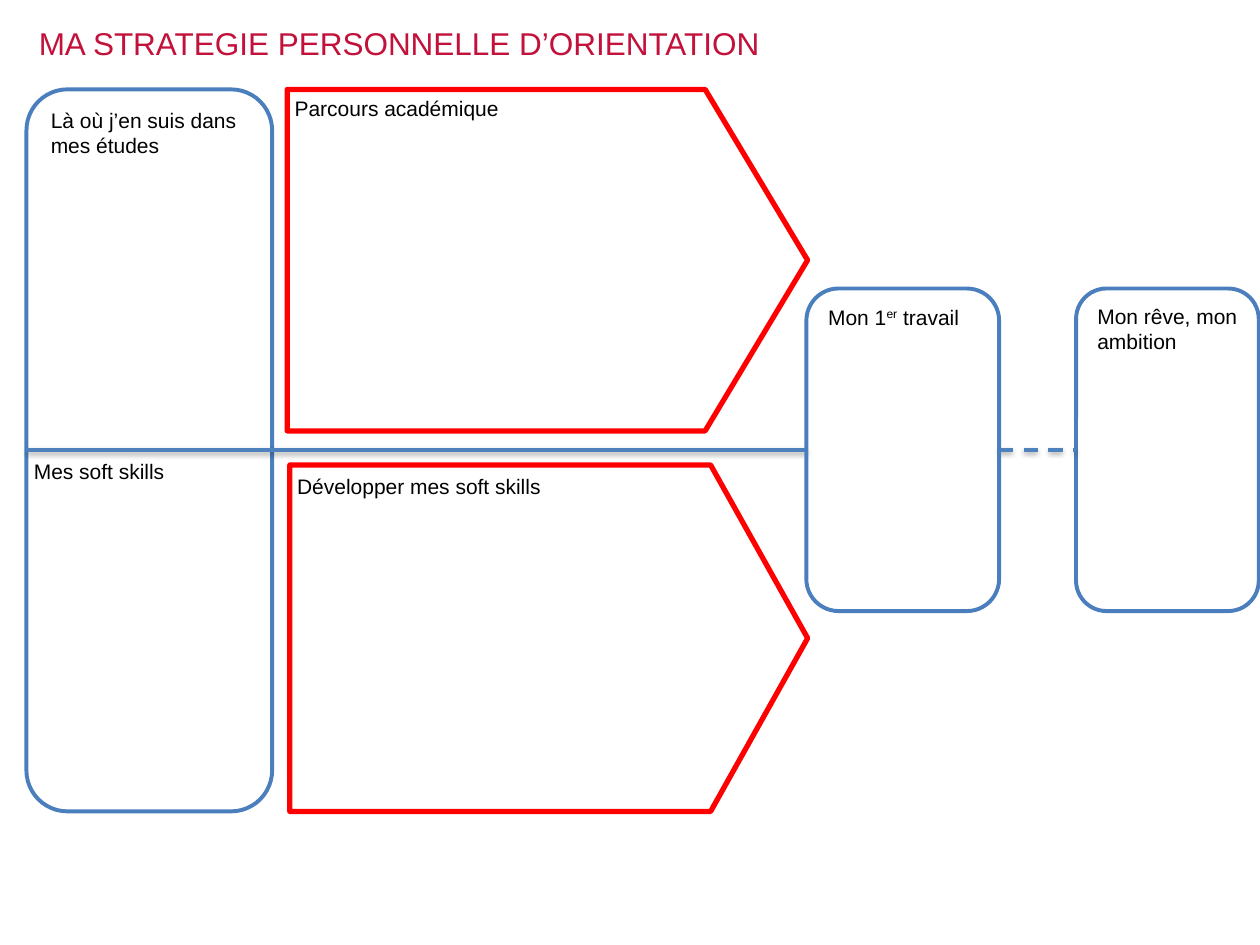
from lxml.etree import SubElement
from pptx import Presentation
from pptx.dml.color import RGBColor
from pptx.enum.dml import MSO_LINE
from pptx.enum.shapes import MSO_CONNECTOR, MSO_SHAPE
from pptx.enum.text import MSO_ANCHOR, MSO_AUTO_SIZE, PP_ALIGN
from pptx.oxml.ns import qn
from pptx.util import Inches, Pt

BLACK = RGBColor(0x00, 0x00, 0x00)
CRIMSON = RGBColor(0xC2, 0x11, 0x3A)
RED = RGBColor(0xFF, 0x00, 0x00)
STEEL = RGBColor(0x4B, 0x7E, 0xBC)
BLUE = RGBColor(0x4F, 0x81, 0xBD)

# The grid has square cells: 100 columns by 75 rows
COLUMNS, ROWS = 100, 75
CELL = Inches(0.1)


class StrategyMap:
    font = "Arial"
    text_size = 12
    title_size = 18

    def __init__(self, presentation):
        self.slide = presentation.slides.add_slide(presentation.slide_layouts[6])

    def grid(self, *cells):
        return [round(cell * CELL) for cell in cells]

    def fill_text(self, frame, parts, size=text_size, color=BLACK):
        """Add parts as runs; every second part is a superscript."""
        frame.vertical_anchor = MSO_ANCHOR.TOP
        paragraph = frame.paragraphs[0]
        paragraph.alignment = PP_ALIGN.LEFT
        for index, part in enumerate(parts):
            run = paragraph.add_run()
            run.text = part
            run.font.name = self.font
            run.font.size = Pt(size)
            run.font.color.rgb = color
            if index % 2:
                run._r.get_or_add_rPr().set("baseline", "30000")

    def outline(self, preset, area, color, width):
        shape = self.slide.shapes.add_shape(preset, *self.grid(*area))
        shape.shadow.inherit = False
        shape.fill.background()
        shape.line.color.rgb = color
        shape.line.width = Pt(width)
        return shape

    def stage(self, area, *parts):
        card = self.outline(MSO_SHAPE.ROUNDED_RECTANGLE, area, STEEL, 2.25)
        card.text_frame.word_wrap = True
        self.fill_text(card.text_frame, parts)

    def pathway(self, area, point):
        arrow = self.outline(MSO_SHAPE.PENTAGON, area, RED, 3)
        arrow.adjustments[0] = point

    def timeline(self, start, end, row, dash=None):
        ends = self.grid(start, row, end, row)
        line = self.slide.shapes.add_connector(MSO_CONNECTOR.STRAIGHT, *ends)
        line.line.color.rgb = BLUE
        line.line.width = Pt(2)
        if dash:
            line.line.dash_style = dash
        # Soft shadow straight below the line
        effects = SubElement(line._element.spPr, qn("a:effectLst"))
        shadow = SubElement(effects, qn("a:outerShdw"), blurRad="40000",
                            dist="20000", dir="5400000", rotWithShape="0")
        tint = SubElement(shadow, qn("a:srgbClr"), val=str(BLACK))
        SubElement(tint, qn("a:alpha"), val="38000")

    def label(self, area, text):
        frame = self.slide.shapes.add_textbox(*self.grid(*area)).text_frame
        frame.word_wrap = False
        frame.auto_size = MSO_AUTO_SIZE.SHAPE_TO_FIT_TEXT
        self.fill_text(frame, [text])

    def title(self, area, text):
        frame = self.slide.shapes.add_textbox(*self.grid(*area)).text_frame
        frame.word_wrap = True
        self.fill_text(frame, [text], self.title_size, CRIMSON)


def main():
    presentation = Presentation()
    presentation.slide_width = COLUMNS * CELL
    presentation.slide_height = ROWS * CELL
    strategy = StrategyMap(presentation)

    left, top, axis = 2.1, 7.1, 35.7
    job_left, job_width, dream_left = 64, 15.3, 85.4
    goal_top, goal_height = 22.9, 25.6

    # Starting point and final ambition
    strategy.stage((left, top, 19.5, 57.3), "Là où j’en suis dans mes études")
    strategy.stage((dream_left, goal_top, 14.5, goal_height),
                   "Mon rêve, mon ambition")

    # Timeline and the two pathways around it
    strategy.timeline(left, job_left, axis)
    strategy.pathway((22.8, top, 41.3, 27.1), 0.3)
    strategy.pathway((23, 36.9, 41.1, 27.5), 0.28)
    strategy.timeline(job_left + job_width, dream_left, axis, MSO_LINE.DASH)

    # Labels
    strategy.label((22.4, top, 18.3, 3), "Parcours académique")
    strategy.label((22.6, 37.1, 21.5, 3), "Développer mes soft skills")
    strategy.label((1.7, 35.9, 12.5, 3), "Mes soft skills")

    # First job
    strategy.stage((job_left, goal_top, job_width, goal_height),
                   "Mon 1", "er", " travail")

    # Title
    strategy.title((left, 1.4, 80.3, 7.1),
                   "MA STRATEGIE PERSONNELLE D’ORIENTATION")

    presentation.save("out.pptx")


if __name__ == "__main__":
    main()
